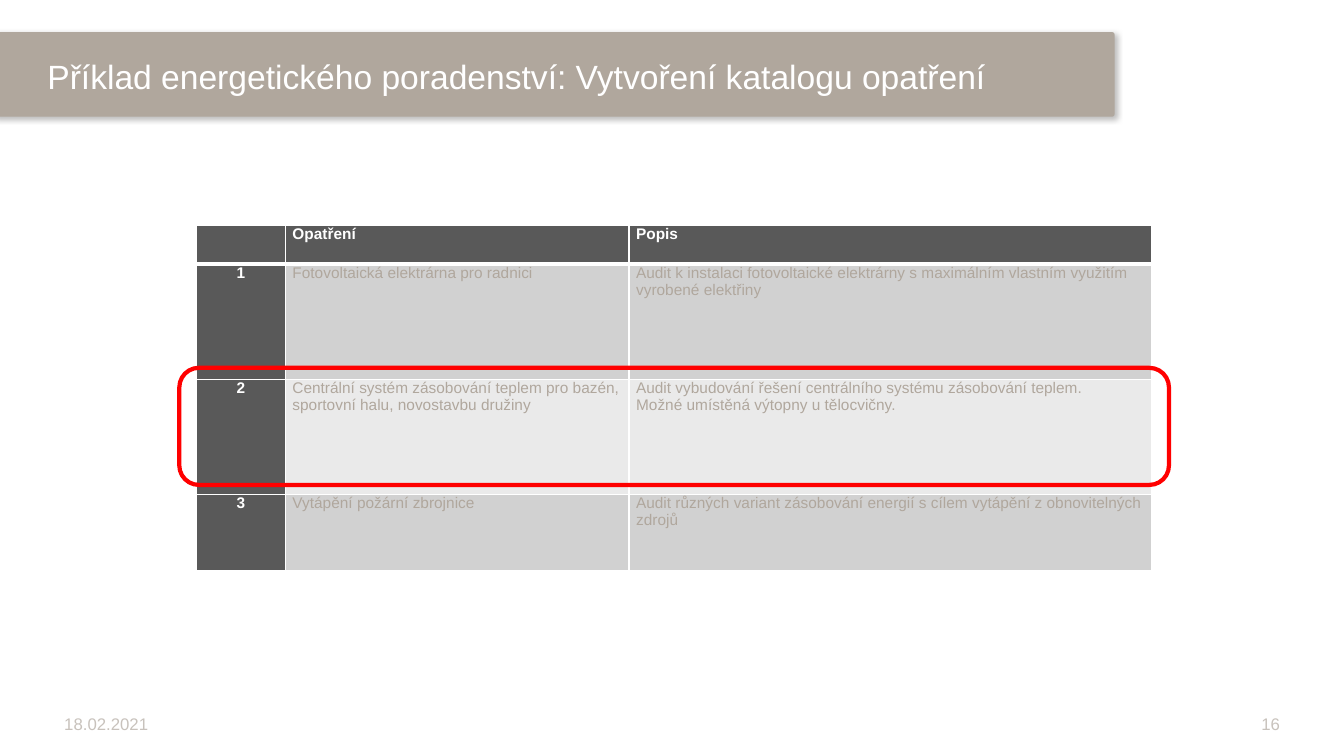
from dataclasses import dataclass

from lxml.etree import SubElement
from pptx import Presentation
from pptx.dml.color import RGBColor as RGB
from pptx.enum.shapes import MSO_SHAPE as Shape
from pptx.enum.text import MSO_ANCHOR as Anchor, MSO_AUTO_SIZE as AutoSize, PP_ALIGN as Align
from pptx.oxml import parse_xml
from pptx.oxml.ns import nsdecls, qn
from pptx.util import Cm, Pt

COLORS = {
    "white": "FFFFFF",
    "taupe": "B0A79D",
    "footer": "C8C2BC",
    "dark": "595959",
    "band_odd": "D1D1D1",
    "band_even": "EAEAEA",
    "highlight": "FF0000",
}
COL_WIDTHS = (2.24, 8.66, 13.16)
TABLE_LEFT, TABLE_TOP = 4.95, 5.69
HEADER_HEIGHT = 0.97


@dataclass
class Measure:
    number: str
    name: str
    description: str
    height: float


@dataclass
class Footer:
    text: str
    left: float
    align: Align


MEASURES = [
    Measure("1", "Fotovoltaická elektrárna pro radnici",
            "Audit k instalaci fotovoltaické elektrárny s maximálním vlastním využitím vyrobené elektřiny", 2.9),
    Measure("2", "Centrální systém zásobování teplem pro bazén, sportovní halu, novostavbu družiny",
            "Audit vybudování řešení centrálního systému zásobování teplem.\n"
            "Možné umístěná výtopny u tělocvičny.", 2.9),
    Measure("3", "Vytápění požární zbrojnice",
            "Audit různých variant zásobování energií s cílem vytápění z obnovitelných zdrojů", 1.93),
]
FOOTERS = [
    Footer("18.02.2021", 1.37, Align.LEFT),
    Footer("16", 24.51, Align.RIGHT),
]


def rgb(name: str) -> RGB:
    """Look up a palette colour."""
    return RGB.from_string(COLORS[name])


def write(tf, text: str, *, size: float, color: str, bold: bool = False,
          align: Align = Align.LEFT, after: float = 0) -> None:
    """Write one paragraph per line of text into a text frame."""
    tf.word_wrap = True
    for i, line in enumerate(text.split("\n")):
        p = tf.add_paragraph() if i else tf.paragraphs[0]
        p.alignment = align
        p.space_before, p.space_after = Pt(0), Pt(after)
        r = p.add_run()
        r.text = line
        r.font.name, r.font.size, r.font.bold = "Arial", Pt(size), bold
        r.font.color.rgb = rgb(color)


def add_round_rect(s, left: float, top: float, width: float, height: float):
    """Add a rounded rectangle without the theme shadow."""
    sp = s.shapes.add_shape(Shape.ROUNDED_RECTANGLE, Cm(left), Cm(top), Cm(width), Cm(height))
    sp.shadow.inherit = False
    return sp


def add_banner(s) -> None:
    """Draw the title band with its soft shadow."""
    sp = add_round_rect(s, -0.18, 0.81, 28.27, 2.13)
    sp.adjustments[0] = 0.03
    sp.fill.solid()
    sp.fill.fore_color.rgb = rgb("taupe")
    sp.line.fill.background()
    effects = sp.element.spPr.find(qn("a:effectLst"))
    shadow = SubElement(effects, qn("a:outerShdw"), blurRad=str(Pt(4)), dist=str(Pt(2)),
                        dir=str(45 * 60000), algn="tl", rotWithShape="0")
    black = SubElement(shadow, qn("a:srgbClr"), val="000000")
    SubElement(black, qn("a:alpha"), val="25000")


def add_title(s, text: str) -> None:
    """Place and format the title in front of the band."""
    sp = s.shapes.title
    sp.left, sp.top, sp.width, sp.height = Cm(0.94), Cm(1.35), Cm(26.75), Cm(1.14)
    sp.text_frame.auto_size = AutoSize.NONE
    sp.text_frame.vertical_anchor = Anchor.MIDDLE
    write(sp.text_frame, text, size=24, color="white", after=1)
    sp.element.getparent().append(sp.element)


def add_footer(s, footer: Footer) -> None:
    """Add one footer text."""
    sp = s.shapes.add_textbox(Cm(footer.left), Cm(17.75), Cm(8), Cm(0.99))
    sp.text_frame.vertical_anchor = Anchor.MIDDLE
    write(sp.text_frame, footer.text, size=12, color="footer", align=footer.align)


def format_cell(cell, fill: str, top: float, bottom: float) -> None:
    """Set the margins, fill and white borders of a cell."""
    cell.margin_left = cell.margin_right = Cm(0.18)
    cell.margin_top = cell.margin_bottom = 0
    cell.vertical_anchor = Anchor.TOP
    cell.fill.solid()
    cell.fill.fore_color.rgb = rgb(fill)
    tc_pr = cell._tc.get_or_add_tcPr()
    borders = (("lnL", 1), ("lnR", 1), ("lnT", top), ("lnB", bottom))
    for i, (tag, width) in enumerate(borders):
        tc_pr.insert(i, parse_xml(
            f'<a:{tag} {nsdecls("a")} w="{Pt(width)}"><a:solidFill>'
            f'<a:srgbClr val="{COLORS["white"]}"/></a:solidFill></a:{tag}>'))


def add_measures_table(s, measures: list[Measure]) -> None:
    """Build the catalogue table with a dark header row and number column."""
    rows = [("", "Opatření", "Popis")] + [(m.number, m.name, m.description) for m in measures]
    heights = [HEADER_HEIGHT] + [m.height for m in measures]
    table = s.shapes.add_table(len(rows), len(COL_WIDTHS), Cm(TABLE_LEFT), Cm(TABLE_TOP),
                               Cm(sum(COL_WIDTHS)), Cm(sum(heights))).table
    for col, width in zip(table.columns, COL_WIDTHS):
        col.width = Cm(width)
    for i, (texts, height) in enumerate(zip(rows, heights)):
        table.rows[i].height = Cm(height)
        for j, text in enumerate(texts):
            head = i == 0 or j == 0
            band = "band_odd" if i % 2 else "band_even"
            cell = table.cell(i, j)
            format_cell(cell, "dark" if head else band,
                        top=3 if i == 1 else 1, bottom=3 if i == 0 else 1)
            align = Align.JUSTIFY if i == 0 else Align.CENTER if j == 0 else Align.LEFT
            if text:
                write(cell.text_frame, text, size=11, color="white" if head else "taupe",
                      bold=head, align=align)


def add_highlight(s) -> None:
    """Outline the second measure in red."""
    sp = add_round_rect(s, 4.52, 9.27, 24.94, 2.95)
    sp.fill.background()
    sp.line.color.rgb = rgb("highlight")
    sp.line.width = Pt(3)


def main() -> None:
    """Build and save the slide."""
    prs = Presentation()
    prs.slide_width, prs.slide_height = Cm(33.87), Cm(19.05)
    s = prs.slides.add_slide(prs.slide_layouts[5])
    add_banner(s)
    for footer in FOOTERS:
        add_footer(s, footer)
    add_title(s, "Příklad energetického poradenství: Vytvoření katalogu opatření")
    add_measures_table(s, MEASURES)
    add_highlight(s)
    prs.save("out.pptx")


if __name__ == "__main__":
    main()
